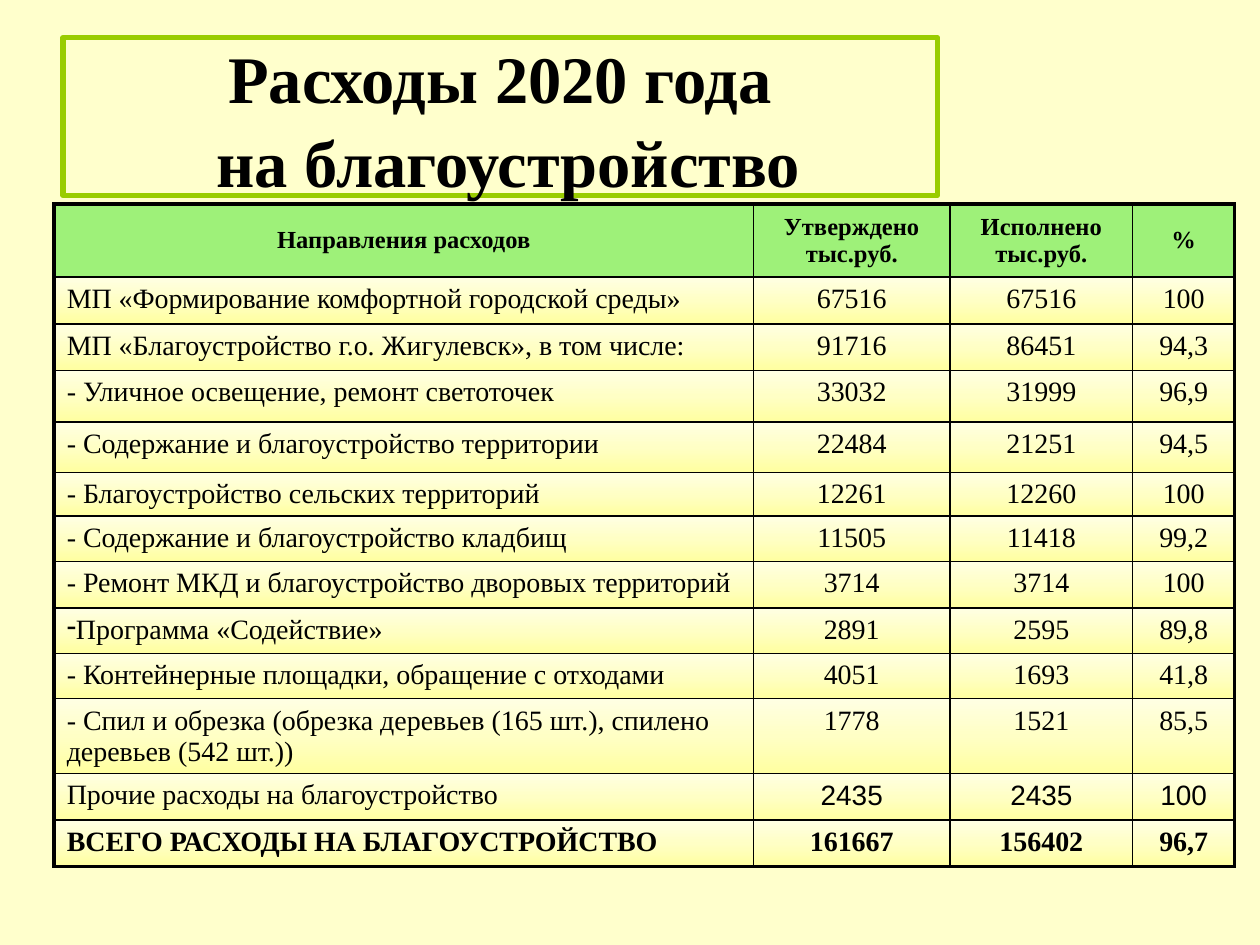
from dataclasses import dataclass

from lxml.etree import SubElement
from pptx import Presentation
from pptx.dml.color import RGBColor
from pptx.enum.text import MSO_ANCHOR, MSO_AUTO_SIZE, PP_ALIGN
from pptx.oxml.ns import qn
from pptx.util import Inches, Pt


@dataclass(frozen=True)
class Theme:
    background: str = "FFFFCC"
    ink: str = "000000"
    frame: str = "99CC00"
    header: str = "3EE527"
    header_opacity: int = 50
    body_stops: tuple = ((0, "FFFFA0"), (50, "FFFFC5"), (100, "FFFFE3"))
    serif: str = "Times New Roman"
    sans: str = "Arial"
    title_size: float = 38
    header_size: float = 14
    body_size: float = 16
    frame_line: float = 3
    outer_line: float = 2.25
    inner_line: float = 1


@dataclass(frozen=True)
class Expense:
    name: str
    approved: str
    executed: str
    percent: str
    height: float = 0.37
    bold: bool = False
    bullet: str = ""
    number_font: str = Theme.serif

    def texts(self) -> tuple:
        return self.name, self.approved, self.executed, self.percent


THEME = Theme()
COLUMN_WIDTHS = (5.55, 1.56, 1.45, 0.81)
HEADER = Expense("Направления расходов", "Утверждено тыс.руб.",
                 "Исполнено тыс.руб.", "%", height=0.58, bold=True)
EXPENSES = (
    Expense("МП «Формирование комфортной городской среды»", "67516", "67516", "100"),
    Expense("МП «Благоустройство г.о. Жигулевск», в том числе:", "91716", "86451", "94,3"),
    Expense("- Уличное освещение, ремонт светоточек", "33032", "31999", "96,9", 0.41),
    Expense("- Содержание и благоустройство территории", "22484", "21251", "94,5", 0.4),
    Expense("- Благоустройство сельских территорий", "12261", "12260", "100", 0.31),
    Expense("- Содержание и благоустройство кладбищ", "11505", "11418", "99,2", 0.36),
    Expense("- Ремонт МКД и благоустройство дворовых территорий", "3714", "3714", "100"),
    Expense("Программа «Содействие»", "2891", "2595", "89,8", 0.36, bullet="-"),
    Expense("- Контейнерные площадки, обращение с отходами", "4051", "1693", "41,8", 0.36),
    Expense("- Спил и обрезка (обрезка деревьев (165 шт.), спилено деревьев (542 шт.))",
            "1778", "1521", "85,5", 0.32),
    Expense("Прочие расходы на благоустройство", "2435", "2435", "100",
            number_font=THEME.sans),
    Expense("ВСЕГО РАСХОДЫ НА БЛАГОУСТРОЙСТВО", "161667", "156402", "96,7", bold=True),
)


def set_font(para, size: float, name: str, bold: bool) -> None:
    para.font.size = Pt(size)
    para.font.name = name
    para.font.bold = bold
    para.font.color.rgb = RGBColor.from_string(THEME.ink)


def add_color(parent, color: str):
    return SubElement(parent, qn("a:srgbClr"), val=color)


def add_borders(cell, outer_sides: set) -> None:
    properties = cell._tc.get_or_add_tcPr()
    for side in "LRTB":
        width = THEME.outer_line if side in outer_sides else THEME.inner_line
        line = SubElement(properties, qn(f"a:ln{side}"), w=str(Pt(width)))
        add_color(SubElement(line, qn("a:solidFill")), THEME.ink)


def fill_header(cell) -> None:
    fill = SubElement(cell._tc.get_or_add_tcPr(), qn("a:solidFill"))
    SubElement(add_color(fill, THEME.header), qn("a:alpha"),
               val=str(THEME.header_opacity * 1000))


def fill_body(cell) -> None:
    """Shade the cell from the bottom edge up to a lighter top."""
    fill = SubElement(cell._tc.get_or_add_tcPr(), qn("a:gradFill"), rotWithShape="1")
    stops = SubElement(fill, qn("a:gsLst"))
    for position, color in THEME.body_stops:
        add_color(SubElement(stops, qn("a:gs"), pos=str(position * 1000)), color)
    SubElement(fill, qn("a:lin"), ang=str(270 * 60000), scaled="1")


def write_cell(cell, text: str, expense: Expense, is_name: bool) -> None:
    is_header = expense is HEADER
    cell.margin_left = cell.margin_right = Inches(0.1)
    cell.margin_top = cell.margin_bottom = Inches(0.05)
    cell.vertical_anchor = MSO_ANCHOR.MIDDLE if is_header else MSO_ANCHOR.TOP
    cell.text = text
    para = cell.text_frame.paragraphs[0]
    para.alignment = PP_ALIGN.LEFT if is_name and not is_header else PP_ALIGN.CENTER
    if is_name and expense.bullet:
        SubElement(para._p.get_or_add_pPr(), qn("a:buChar"), char=expense.bullet)
    set_font(para, THEME.header_size if is_header else THEME.body_size,
             THEME.serif if is_name else expense.number_font, expense.bold)


def add_title(page) -> None:
    title = page.shapes.title
    title.left, title.top = Inches(0.5), Inches(0.3)
    title.width, title.height = Inches(6.94), Inches(1.25)
    title.line.color.rgb = RGBColor.from_string(THEME.frame)
    title.line.width = Pt(THEME.frame_line)
    frame = title.text_frame
    frame.text = "Расходы 2020 года\v на благоустройство"
    frame.auto_size = MSO_AUTO_SIZE.NONE
    frame.word_wrap = True
    frame.vertical_anchor = MSO_ANCHOR.MIDDLE
    para = frame.paragraphs[0]
    para.alignment = PP_ALIGN.CENTER
    para.line_spacing = 1.05
    set_font(para, THEME.title_size, THEME.serif, True)


def add_expense_table(page) -> None:
    rows = (HEADER, *EXPENSES)
    last_row, last_column = len(rows) - 1, len(COLUMN_WIDTHS) - 1
    holder = page.shapes.add_table(len(rows), len(COLUMN_WIDTHS), Inches(0.43), Inches(1.62),
                                   Inches(sum(COLUMN_WIDTHS)), Inches(5.34))
    table = holder.table
    table.first_row = table.horz_banding = False
    for column, width in zip(table.columns, COLUMN_WIDTHS):
        column.width = Inches(width)
    for row, expense in enumerate(rows):
        table.rows[row].height = Inches(expense.height)
        for column, text in enumerate(expense.texts()):
            cell = table.cell(row, column)
            write_cell(cell, text, expense, is_name=column == 0)
            edges = {"L": column == 0, "R": column == last_column,
                     "T": row == 0, "B": row == last_row}
            add_borders(cell, {side for side, outer in edges.items() if outer})
            (fill_header if expense is HEADER else fill_body)(cell)
    holder.height = Inches(5.34)


def main() -> None:
    deck = Presentation()
    deck.slide_width, deck.slide_height = Inches(10), Inches(7.5)
    page = deck.slides.add_slide(deck.slide_layouts.get_by_name("Title Only"))
    page.background.fill.solid()
    page.background.fill.fore_color.rgb = RGBColor.from_string(THEME.background)
    add_title(page)
    add_expense_table(page)
    deck.save("out.pptx")


if __name__ == "__main__":
    main()
